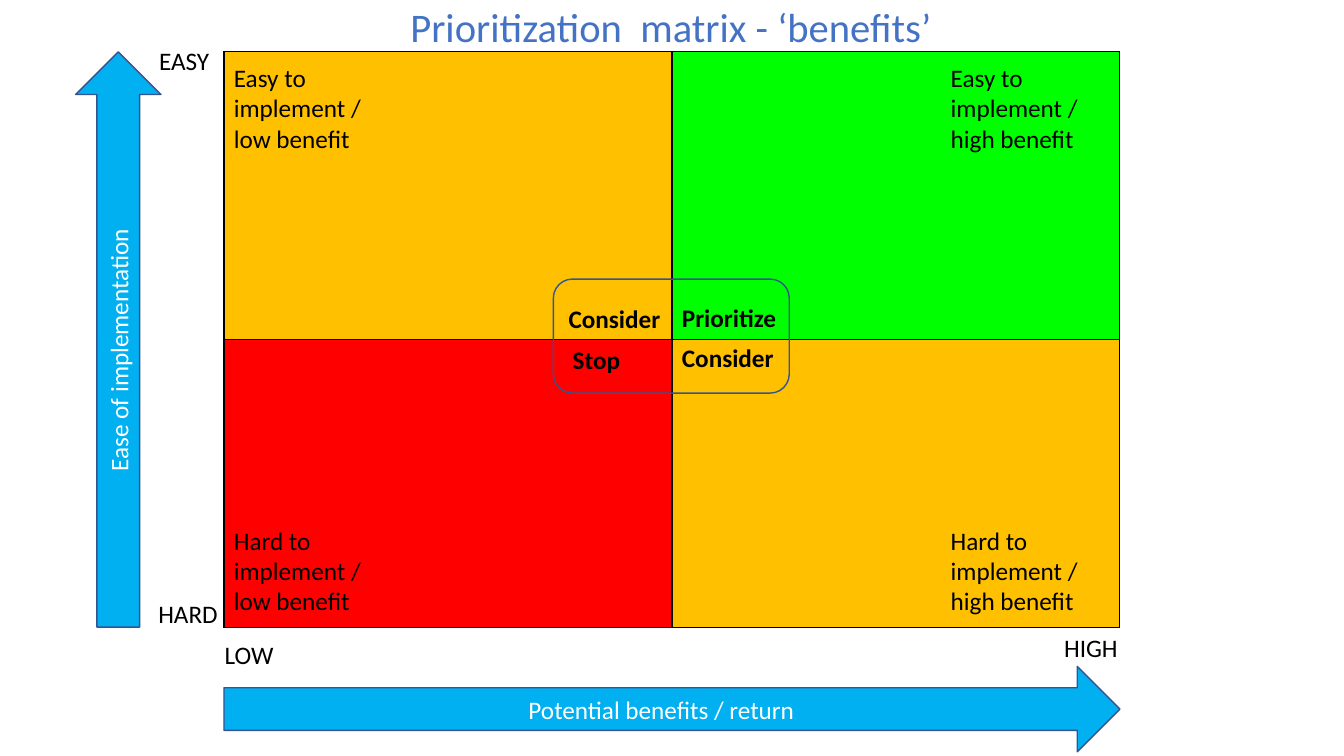
from pptx import Presentation
from pptx.dml.color import RGBColor
from pptx.enum.shapes import MSO_SHAPE
from pptx.enum.text import MSO_ANCHOR, MSO_AUTO_SIZE, PP_ALIGN
from pptx.oxml import parse_xml
from pptx.oxml.ns import nsdecls, qn
from pptx.util import Pt

ARROW = MSO_SHAPE.UP_ARROW
ROUND = MSO_SHAPE.ROUNDED_RECTANGLE
MIDDLE = MSO_ANCHOR.MIDDLE
GROW = MSO_AUTO_SIZE.SHAPE_TO_FIT_TEXT
LEFT, CENTER = PP_ALIGN.LEFT, PP_ALIGN.CENTER

BLACK, WHITE, TITLE = "000000", "FFFFFF", "4472C4"
EDGE, SKY = "325491", "00B0F0"
AMBER, GREEN, RED = "FFC000", "00FF00", "FF0000"

GRID_X, GRID_Y, GRID_W, GRID_H = 160, 37, 640, 411
ARROW_W = 61


def color(code):
    return RGBColor.from_string(code)


class Board:
    font = {"name": "Calibri", "size": Pt(18), "bold": False}

    def __init__(self, slide):
        self.slide = slide

    def fill_text(self, frame, text, ink=BLACK, align=LEFT, **style):
        para = frame.paragraphs[0]
        para.alignment = align
        run = para.add_run()
        run.text = text
        for name, value in {**self.font, **style}.items():
            setattr(run.font, name, value)
        run.font.color.rgb = color(ink)
        return para

    def label(self, text, x, y, w, h=29, **style):
        box = self.slide.shapes.add_textbox(Pt(x), Pt(y), Pt(w), Pt(h))
        frame = box.text_frame
        for name, value in {"word_wrap": True, "auto_size": GROW}.items():
            setattr(frame, name, value)
        return self.fill_text(frame, text, **style)

    def shape(self, kind, x, y, w, h, fill=None):
        item = self.slide.shapes.add_shape(kind, Pt(x), Pt(y), Pt(w), Pt(h))
        item.shadow.inherit = False
        if fill:
            item.fill.solid()
            item.fill.fore_color.rgb = color(fill)
        else:
            item.fill.background()
        item.line.color.rgb = color(EDGE)
        item.line.width = Pt(1)
        return item

    def arrow(self, text, x, y, size, turn=0):
        item = self.shape(ARROW, x, y, ARROW_W, size, SKY)
        item.rotation = turn
        frame = item.text_frame
        frame.vertical_anchor = MIDDLE
        next(item.element.iter(qn("a:bodyPr"))).set("vert", "vert270")
        self.fill_text(frame, text, WHITE, CENTER)

    def border(self, cell):
        props = cell._tc.get_or_add_tcPr()
        for side in ("L", "R", "T", "B"):
            props.append(parse_xml(
                f'<a:ln{side} {nsdecls("a")} w="12700"><a:solidFill>'
                f'<a:srgbClr val="{BLACK}"/></a:solidFill></a:ln{side}>'))

    def table(self, fills, x, y, w, h):
        rows, cols = len(fills), len(fills[0])
        grid = self.slide.shapes.add_table(
            rows, cols, Pt(x), Pt(y), Pt(w), Pt(h)).table
        for name in ("first_row", "horz_banding"):
            setattr(grid, name, False)
        for r, line in enumerate(fills):
            for c, fill in enumerate(line):
                cell = grid.cell(r, c)
                self.border(cell)
                cell.fill.solid()
                cell.fill.fore_color.rgb = color(fill)


def main():
    deck = Presentation()
    deck.slide_width, deck.slide_height = Pt(960), Pt(540)
    board = Board(deck.slides.add_slide(deck.slide_layouts[6]))

    board.table([[AMBER, GREEN], [RED, AMBER]],
                GRID_X, GRID_Y, GRID_W, GRID_H)
    board.arrow("Ease of implementation", 54, GRID_Y, GRID_H)
    mid_x, mid_y = GRID_X + GRID_W / 2, 506.5
    board.arrow("Potential benefits / return", mid_x - ARROW_W / 2,
                mid_y - GRID_W / 2, GRID_W, 90)

    for text, x, y, w in (("HARD", 106, 424, 74), ("LOW", 153.4, 453, 54),
                          ("EASY", 106.5, 29, 54), ("HIGH", 753, 448, 54)):
        board.label(text, x, y, w)

    note_w = 128
    for ease, y in (("Easy", 41), ("Hard", 371.5)):
        for gain, x in (("low", GRID_X), ("high", GRID_X + GRID_W - note_w)):
            board.label(f"{ease} to implement / {gain} benefit",
                        x, y, note_w, 73)

    title = board.label("Prioritization  matrix - ‘benefits’", 217.5, 2, 524,
                        39, ink=TITLE, align=CENTER, size=Pt(29))
    title.line_spacing = 0.9

    for text, x, y in (("Consider", 399, 213), ("Prioritize", 480, 212.4),
                       ("Stop", 402, 242.6), ("Consider", 480, 241)):
        board.label(text, x, y, 87, bold=True)
    board.shape(ROUND, 395.3, 199.4, 168.5, 81.4)

    deck.save("out.pptx")


if __name__ == "__main__":
    main()
